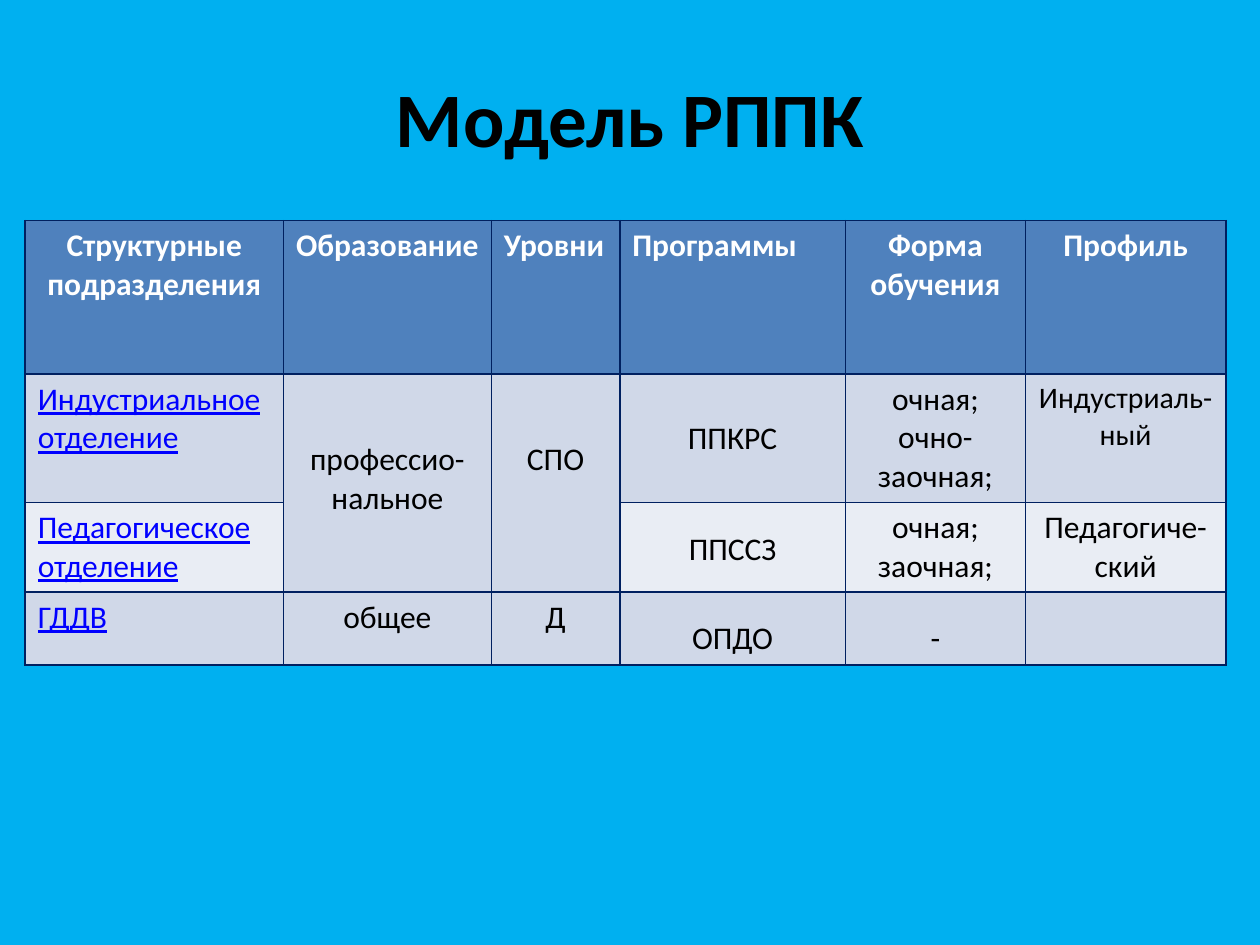
from dataclasses import dataclass

from lxml.etree import SubElement
from pptx import Presentation
from pptx.dml.color import RGBColor as RGB
from pptx.enum.text import MSO_ANCHOR as Anchor, PP_ALIGN as Align
from pptx.oxml.ns import qn
from pptx.util import Inches, Pt


@dataclass(frozen=True)
class Theme:
    font: str = "Calibri"
    background: str = "00B0F0"
    header: str = "4F81BD"
    odd_band: str = "D0D8E8"
    even_band: str = "E9EDF4"
    border: str = "002060"
    ink: str = "000000"
    header_ink: str = "FFFFFF"
    link: str = "0000FF"
    title_size: int = 44
    body_size: int = 18
    narrow_size: int = 17


THEME = Theme()
WIDTH, HEIGHT = Inches(10), Inches(7.5)
COLUMNS = [2.05, 1.65, 1.02, 1.79, 1.43, 1.59]
ROWS = [1.22, 1.02, 0.71, 0.58]
TABLE_LEFT, TABLE_TOP = 0.2, 1.75

HEADINGS = ["Структурные подразделения", "Образование", "Уровни",
            "Программы", "Форма обучения", "Профиль"]
DEPARTMENTS = [
    ["Индустриальное\nотделение", "профессио-нальное", "СПО", "ППКРС",
     "очная;\nочно-заочная;", "Индустриаль-ный"],
    ["Педагогическое\nотделение", "", "", "ППССЗ",
     "очная;\nзаочная;", "Педагогиче-ский"],
    ["ГДДВ", "общее", "Д", "ОПДО", "-", ""],
]
LEFT_HEADINGS = {"Образование", "Уровни", "Программы"}
# Extra space above the text, in inches, by (row, column)
DROPS = {(1, 1): 0.48, (1, 2): 0.48, (1, 3): 0.31,
         (2, 3): 0.17, (3, 3): 0.17, (3, 4): 0.17}


def write(frame, text, size, color, align, bold=False, underline=False):
    frame.text = text
    for paragraph in frame.paragraphs:
        paragraph.alignment = align
        paragraph.font.size = Pt(size)
        for run in paragraph.runs:
            font = run.font
            font.name, font.size = THEME.font, Pt(size)
            font.bold, font.underline = bold, underline
            font.color.rgb = RGB.from_string(color)


def outline(cell):
    properties = cell._tc.get_or_add_tcPr()
    for side in ("a:lnL", "a:lnR", "a:lnT", "a:lnB"):
        line = SubElement(properties, qn(side), w=str(Pt(1)))
        fill = SubElement(line, qn("a:solidFill"))
        SubElement(fill, qn("a:srgbClr"), val=THEME.border)


def paint(cell, color):
    outline(cell)
    cell.fill.solid()
    cell.fill.fore_color.rgb = RGB.from_string(color)


def add_title(slide, text):
    title = slide.shapes.add_textbox(
        int(WIDTH * 0.05), int(HEIGHT * 0.04),
        int(WIDTH * 0.9), Inches(1.25))
    frame = title.text_frame
    frame.word_wrap = True
    frame.vertical_anchor = Anchor.MIDDLE
    write(frame, text, THEME.title_size, THEME.ink, Align.CENTER, bold=True)


def add_model_table(slide):
    table = slide.shapes.add_table(
        len(ROWS), len(COLUMNS), Inches(TABLE_LEFT), Inches(TABLE_TOP),
        Inches(sum(COLUMNS)), Inches(sum(ROWS))).table
    for column, width in zip(table.columns, COLUMNS):
        column.width = Inches(width)
    for row, height in zip(table.rows, ROWS):
        row.height = Inches(height)

    # Header row
    for column, heading in enumerate(HEADINGS):
        cell = table.cell(0, column)
        paint(cell, THEME.header)
        align = Align.LEFT if heading in LEFT_HEADINGS else Align.CENTER
        write(cell.text_frame, heading, THEME.body_size, THEME.header_ink,
              align, bold=True)

    # Departments, with links in the first column
    for row, department in enumerate(DEPARTMENTS, start=1):
        for column, text in enumerate(department):
            cell = table.cell(row, column)
            paint(cell, THEME.odd_band if row % 2 else THEME.even_band)
            cell.margin_top = Inches(0.05 + DROPS.get((row, column), 0))
            is_link = column == 0
            narrow = (row, column) == (1, 5)
            write(cell.text_frame, text,
                  THEME.narrow_size if narrow else THEME.body_size,
                  THEME.link if is_link else THEME.ink,
                  Align.LEFT if is_link else Align.CENTER,
                  underline=is_link)

    # Education and level shared by the first two departments
    for column in (1, 2):
        table.cell(1, column).merge(table.cell(2, column))


def main():
    deck = Presentation()
    deck.slide_width, deck.slide_height = WIDTH, HEIGHT
    slide = deck.slides.add_slide(deck.slide_layouts[6])
    slide.background.fill.solid()
    slide.background.fill.fore_color.rgb = RGB.from_string(THEME.background)
    add_title(slide, "Модель РППК")
    add_model_table(slide)
    deck.save("out.pptx")


if __name__ == "__main__":
    main()
